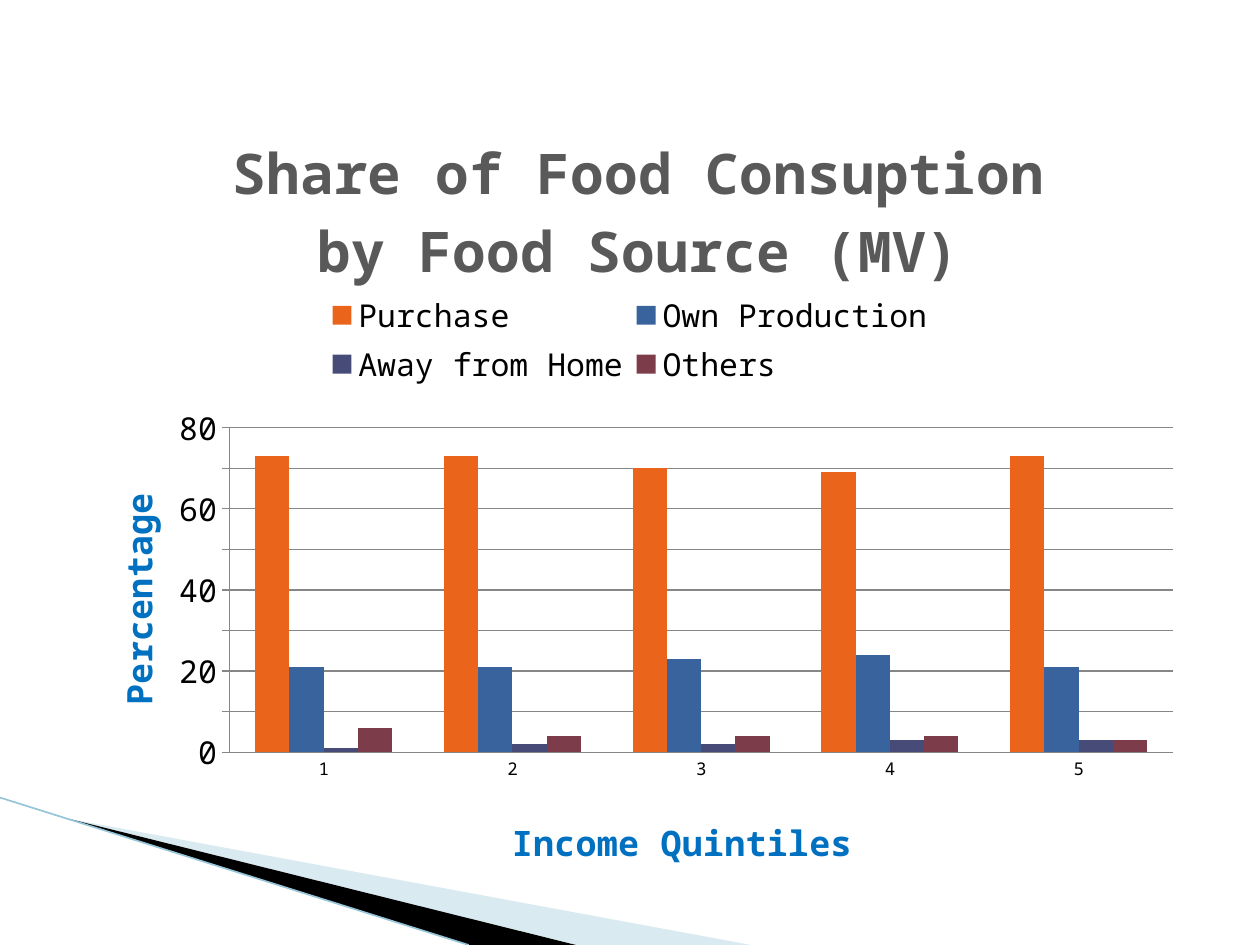
from lxml import etree
from pptx import Presentation
from pptx.chart.data import CategoryChartData
from pptx.dml.color import RGBColor
from pptx.enum.chart import XL_CHART_TYPE as ChartType
from pptx.enum.chart import XL_LEGEND_POSITION as LegendPos
from pptx.enum.chart import XL_TICK_MARK as Tick
from pptx.enum.shapes import MSO_CONNECTOR as Connector
from pptx.oxml import parse_xml
from pptx.oxml.ns import nsdecls, qn
from pptx.util import Inches, Pt

FONT = "Noto Sans Mono"
GRAY = "868686"
SERIES = [
    ("Purchase", (73, 73, 70, 69, 73), "EB641B"),
    ("Own Production", (21, 21, 23, 24, 21), "39639D"),
    ("Away from Home", (1, 2, 2, 3, 3), "474B78"),
    ("Others", (6, 4, 4, 4, 3), "7D3C4A"),
]


def rgb(value):
    """Turn a hex string into a colour."""
    return RGBColor.from_string(value)


def set_font(font, size, color="000000", bold=False):
    """Apply the slide font with a size, colour and weight."""
    for name, value in {"name": FONT, "size": Pt(size), "bold": bold}.items():
        setattr(font, name, value)
    font.color.rgb = rgb(color)


def set_layout(el, x, y, w=None, h=None, inner=False):
    """Place a chart part by fractions of the chart area."""
    old = el.find(qn("c:layout"))
    if old is not None:
        el.remove(old)
    values = {"xMode": "edge", "yMode": "edge", "x": x, "y": y, "w": w, "h": h}
    if inner:
        values = {"layoutTarget": "inner", **values}
    parts = "".join(f'<c:{k} val="{v}"/>' for k, v in values.items() if v is not None)
    layout = parse_xml(
        f'<c:layout {nsdecls("c")}><c:manualLayout>{parts}</c:manualLayout></c:layout>')
    el.insert(0 if inner else 1, layout)


def set_title(owner, text, size, color, x, y):
    """Give a chart or an axis a bold placed title."""
    owner.has_title = True
    title = owner.chart_title if hasattr(owner, "chart_title") else owner.axis_title
    tf = title.text_frame
    tf.text = text
    set_font(tf.paragraphs[0].runs[0].font, size, color, True)
    set_layout(tf._txBody.getparent().getparent(), x, y)


def add_band(slide, points, color, alpha=None):
    """Draw one filled band of the corner decoration."""
    pts = [(Inches(x), Inches(y)) for x, y in points]
    builder = slide.shapes.build_freeform(*pts[0])
    builder.add_line_segments(pts[1:], close=True)
    sp = builder.convert_to_shape()
    sp.shadow.inherit = False
    sp.fill.solid()
    sp.fill.fore_color.rgb = rgb(color)
    sp.line.fill.background()
    if alpha:
        clr = sp.fill._xPr.find(".//" + qn("a:srgbClr"))
        etree.SubElement(clr, qn("a:alpha")).set("val", str(alpha * 1000))


def add_corner(slide, left, top, bottom):
    """Draw the bands and edge line in the lower left corner."""
    start = (left + 0.55, top + 0.17)
    add_band(slide, [start, (left + 5.96, bottom), (left + 4.57, bottom)], "A0CBDC", 40)
    add_band(slide, [start, (left + 4.57, bottom), (left + 3.72, bottom)], "000000")
    line = slide.shapes.add_connector(
        Connector.STRAIGHT, Inches(left), Inches(top), Inches(left + 3.72), Inches(bottom))
    line.line.color.rgb = rgb("97C5D8")
    line.line.width = Pt(0.95)
    etree.SubElement(line._element.spPr, qn("a:effectLst"))


def add_share_chart(slide, left, top, width, height):
    """Draw the clustered columns of food share by income quintile."""
    data = CategoryChartData(number_format="###0")
    data.categories = ["1", "2", "3", "4", "5"]
    for name, values, _ in SERIES:
        data.add_series(name, values)
    box = [Inches(v) for v in (left, top, width, height)]
    chart = slide.shapes.add_chart(ChartType.COLUMN_CLUSTERED, *box, data).chart
    set_font(chart.font, 10)
    set_title(chart, "Share of Food Consuption by Food Source (MV)", 32, "595959", 0.14, 0.04)

    plot = chart.plots[0]
    plot.gap_width, plot.overlap, plot.vary_by_categories = 150, 0, False
    for series, (_, _, color) in zip(plot.series, SERIES):
        series.format.fill.solid()
        series.format.fill.fore_color.rgb = rgb(color)
        series.invert_if_negative = False
    set_layout(chart._chartSpace.chart.plotArea, 0.146, 0.431, 0.834, 0.409, inner=True)

    cat, val = chart.category_axis, chart.value_axis
    set_title(cat, "Income Quintiles", 20, "0070C0", 0.39, 0.91)
    set_title(val, "Percentage", 20, "0070C0", 0.035, 0.505)
    set_font(cat.tick_labels.font, 10)
    set_font(val.tick_labels.font, 18)
    cat.major_tick_mark = Tick.NONE
    scale = {"minimum_scale": 0, "maximum_scale": 80, "major_unit": 10,
             "major_tick_mark": Tick.CROSS, "has_major_gridlines": True}
    for name, value in scale.items():
        setattr(val, name, value)
    val.tick_labels.number_format = "###0"
    val.tick_labels.number_format_is_linked = False
    for fmt in (cat.format, val.format, val.major_gridlines.format):
        fmt.line.color.rgb = rgb(GRAY)
        fmt.line.width = Pt(0.75)

    chart.has_legend = True
    chart.legend.position = LegendPos.TOP
    chart.legend.include_in_layout = False
    set_font(chart.legend.font, 18)
    set_layout(chart.legend._element, 0.225, 0.255, 0.55, 0.13)


def main():
    """Build and save the slide."""
    prs = Presentation()
    prs.slide_width, prs.slide_height = Inches(10), Inches(7.5)
    slide = prs.slides.add_slide(prs.slide_layouts[6])
    add_corner(slide, 0, 6.33, 7.5)
    add_share_chart(slide, 0.51, 0.68, 8.98, 6.3)
    prs.save("out.pptx")


if __name__ == "__main__":
    main()
